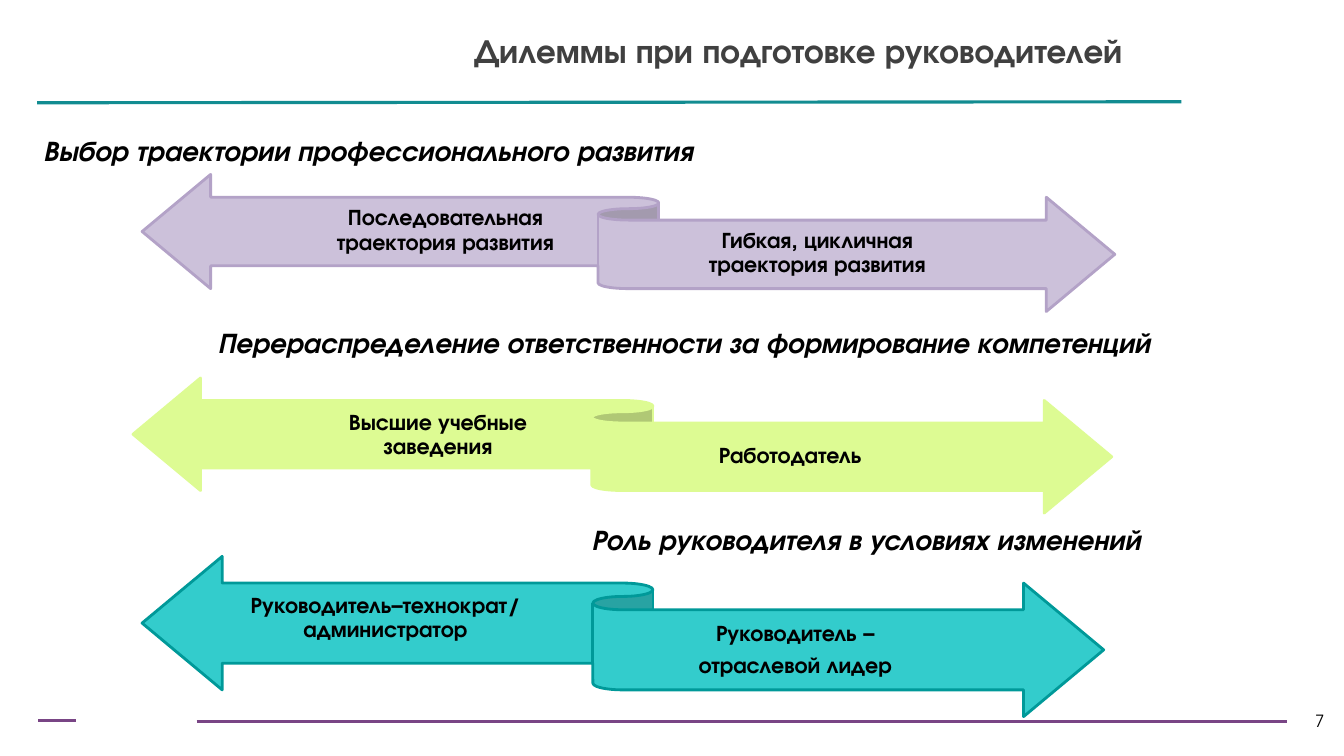
from pptx import Presentation
from pptx.dml.color import RGBColor
from pptx.enum import shapes, text
from pptx.oxml.ns import qn
from pptx.util import Pt

FONT = "TeX Gyre Adventor"
LEFT, MID, RIGHT = text.PP_ALIGN.LEFT, text.PP_ALIGN.CENTER, text.PP_ALIGN.RIGHT


def rgb(code):
    return RGBColor.from_string(code)


def write(box, words, size, align=LEFT, color="000000", bold=True,
          italic=False, label=False, middle=True):
    shape = slide.shapes.add_textbox(*[Pt(v) for v in box])
    frame = shape.text_frame
    frame.word_wrap = True
    frame.vertical_anchor = text.MSO_ANCHOR.MIDDLE if middle else text.MSO_ANCHOR.TOP
    if label:
        frame.margin_left = frame.margin_right = 0
        frame.margin_top, frame.margin_bottom = Pt(4.3), Pt(5)
    frame.text = words
    for para in frame.paragraphs:
        para.alignment = align
        font = para.font
        font.name, font.size = FONT, Pt(size)
        font.bold, font.italic = bold, italic
        font.color.rgb = rgb(color)
        if label:
            para.line_spacing = 0.9
            para.space_after = Pt(5.6)


deck = Presentation()
deck.slide_width, deck.slide_height = Pt(960), Pt(540)
slide = deck.slides.add_slide(deck.slide_layouts[6])

# Rules under the title and along the foot
rules = [
    (26.6, 73.4, 843.8, 72.7, "128C91"),
    (140.4, 515.5, 919.4, 515.5, "794585"),
    (27.4, 514.8, 54, 514.8, "794585"),
]
for *ends, color in rules:
    rule = slide.shapes.add_connector(
        shapes.MSO_CONNECTOR.STRAIGHT, *[Pt(v) for v in ends])
    rule.line.color.rgb = rgb(color)
    rule.line.width = Pt(2.25)
    props = rule._element.spPr
    props.append(props.makeelement(qn("a:effectLst"), {}))

# Title and page number
write((187.2, 13.7, 766, 44.6), "Дилеммы при подготовке руководителей", 24,
      MID, color="404040")
write((912.2, 500.4, 41, 28.8), "7", 12, RIGHT, bold=False)

# Ribbons, each with a label at either end
ribbons = [
    ((101.5, 397.4, 686.9, 114.5), "33CCCC", "009999", [
        ((144.7, 414, 261.4, 56.2), "Руководитель–технократ/администратор"),
        ((421.9, 431.3, 292.3, 67), "Руководитель –\nотраслевой лидер")]),
    ((101.5, 124.6, 694.8, 97.9), "CCC1DA", "B3A2C7", [
        ((208.8, 141.1, 218.9, 48.2), "Последовательная траектория развития"),
        ((482.4, 157, 203, 48.2), "Гибкая, цикличная траектория развития")]),
    ((95, 270, 699.1, 96.5), "DDFB93", "DDFB93", [
        ((222.5, 287.3, 180.7, 47.5), "Высшие учебные заведения"),
        ((493.9, 302.4, 141.1, 47.5), "Работодатель")]),
]
for box, fill, edge, labels in ribbons:
    ribbon = slide.shapes.add_shape(
        shapes.MSO_SHAPE.LEFT_RIGHT_RIBBON, *[Pt(v) for v in box])
    ribbon.shadow.inherit = False
    ribbon.fill.solid()
    ribbon.fill.fore_color.rgb = rgb(fill)
    ribbon.line.color.rgb = rgb(edge)
    ribbon.line.width = Pt(2)
    for place, words in labels:
        write(place, words, 16, MID, label=True)

# Headings above the ribbons
heads = [
    ((23.8, 91.4, 659.5, 29.5), "Выбор траектории профессионального развития"),
    ((148.3, 229, 789.1, 37.4),
     "Перераспределение ответственности за формирование компетенций"),
    ((415.4, 369.4, 522, 40.3), "Роль руководителя в условиях изменений"),
]
for box, words in heads:
    write(box, words, 20.3, italic=True, middle=False)

deck.save("out.pptx")
